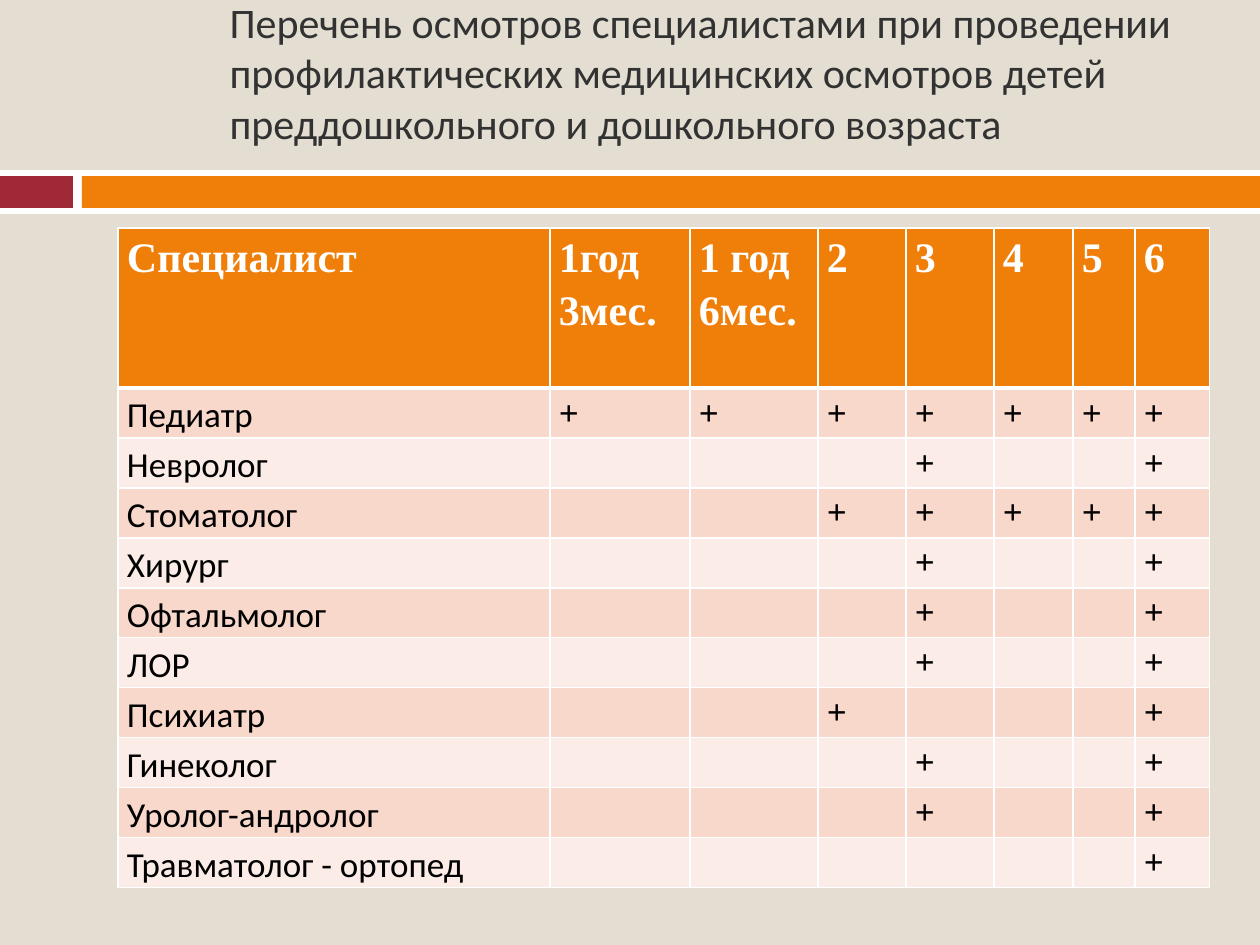
from lxml.etree import SubElement
from pptx import Presentation
from pptx.dml.color import RGBColor
from pptx.enum.shapes import MSO_SHAPE
from pptx.enum.text import MSO_ANCHOR, MSO_AUTO_SIZE, PP_ALIGN
from pptx.oxml.ns import qn
from pptx.util import Emu, Pt

COLORS = {
    "background": "E3DED1", "white": "FFFFFF", "black": "000000",
    "title": "323232", "red": "9F2936", "orange": "F07F09",
    "band_dark": "F9D8CC", "band_light": "FCECE7",
}
HEADERS = ["Специалист", "1год 3мес.", "1 год 6мес.", "2", "3", "4", "5", "6"]
# Specialist and the columns that hold a plus
EXAMS = [
    ("Педиатр", range(1, 8)),
    ("Невролог", (4, 7)),
    ("Стоматолог", range(3, 8)),
    ("Хирург", (4, 7)),
    ("Офтальмолог", (4, 7)),
    ("ЛОР", (4, 7)),
    ("Психиатр", (3, 7)),
    ("Гинеколог", (4, 7)),
    ("Уролог-андролог", (4, 7)),
    ("Травматолог - ортопед", (7,)),
]
COL_WIDTHS = [432, 140, 128, 88, 88, 79, 62, 75]
HEADER_HEIGHT, ROW_HEIGHT = 160, 50


def px(n):
    return Emu(round(n * 914400 / 126))


def rgb(name):
    return RGBColor.from_string(COLORS[name])


class Deck:
    sans, serif = "Calibri", "Times New Roman"

    def __init__(self):
        self.prs = Presentation()
        self.prs.slide_width, self.prs.slide_height = px(1260), px(945)

    def add_slide(self):
        self.s = self.prs.slides.add_slide(self.prs.slide_layouts[5])
        fill = self.s.background.fill
        fill.solid()
        fill.fore_color.rgb = rgb("background")

    def format_text(self, p, size, font, color, bold=False):
        for r in p.runs:
            r.font.size, r.font.name, r.font.bold = Pt(size), font, bold
            r.font.color.rgb = rgb(color)

    def title(self, text, x, y, w, h):
        sp = self.s.shapes.title
        sp.left, sp.top, sp.width, sp.height = px(x), px(y), px(w), px(h)
        tf = sp.text_frame
        tf.text = text
        tf.word_wrap = True
        tf.auto_size = MSO_AUTO_SIZE.NONE
        tf.vertical_anchor = MSO_ANCHOR.MIDDLE
        tf.margin_bottom = px(56)  # lifts the text above the bar
        p = tf.paragraphs[0]
        p.alignment = PP_ALIGN.LEFT
        self.format_text(p, 24, self.sans, "title")

    def bar(self, x, y, w, h, color):
        sp = self.s.shapes.add_shape(MSO_SHAPE.RECTANGLE, px(x), px(y), px(w), px(h))
        sp.shadow.inherit = False
        sp.fill.solid()
        sp.fill.fore_color.rgb = rgb(color)
        sp.line.fill.background()

    def table(self, x, y, widths, heights):
        frame = self.s.shapes.add_table(len(heights), len(widths), px(x), px(y),
                                        px(sum(widths)), px(sum(heights)))
        for col, w in zip(frame.table.columns, widths):
            col.width = px(w)
        for row, h in zip(frame.table.rows, heights):
            row.height = px(h)
        return frame.table

    def cell(self, cell, text, fill, size, font, color, bold, top=1, bottom=1):
        cell.margin_left = cell.margin_right = px(9)
        cell.margin_top = cell.margin_bottom = 0
        self.borders(cell, {"L": 1, "R": 1, "T": top, "B": bottom})
        cell.fill.solid()
        cell.fill.fore_color.rgb = rgb(fill)
        if text:
            cell.text_frame.text = text
            p = cell.text_frame.paragraphs[0]
            p.line_spacing = 1.15
            self.format_text(p, size, font, color, bold)

    def borders(self, cell, widths):
        tc_pr = cell._tc.get_or_add_tcPr()
        for side, width in widths.items():
            ln = SubElement(tc_pr, qn(f"a:ln{side}"), w=str(Pt(width)))
            fill = SubElement(ln, qn("a:solidFill"))
            SubElement(fill, qn("a:srgbClr"), val=COLORS["white"])


def main():
    deck = Deck()
    deck.add_slide()

    # Title and the bars under it
    deck.title("Перечень осмотров специалистами при проведении профилактических "
               "медицинских осмотров детей преддошкольного и дошкольного возраста",
               217, 29, 1002, 136)
    deck.bar(0, 170, 1260, 44, "white")
    deck.bar(0, 176, 73, 32, "red")
    deck.bar(82, 176, 1178, 32, "orange")

    # Table header
    table = deck.table(118, 228, COL_WIDTHS,
                       [HEADER_HEIGHT] + [ROW_HEIGHT] * len(EXAMS))
    for c, text in enumerate(HEADERS):
        deck.cell(table.cell(0, c), text, "orange", 24, deck.serif, "white",
                  True, bottom=3)

    # Specialists in banded rows
    for r, (name, marked) in enumerate(EXAMS, 1):
        fill = "band_dark" if r % 2 else "band_light"
        top = 3 if r == 1 else 1
        deck.cell(table.cell(r, 0), name, fill, 20, deck.sans, "black", False, top)
        for c in range(1, len(HEADERS)):
            deck.cell(table.cell(r, c), "+" if c in marked else "", fill, 20,
                      deck.serif, "black", True, top)

    deck.prs.save("out.pptx")


if __name__ == "__main__":
    main()
